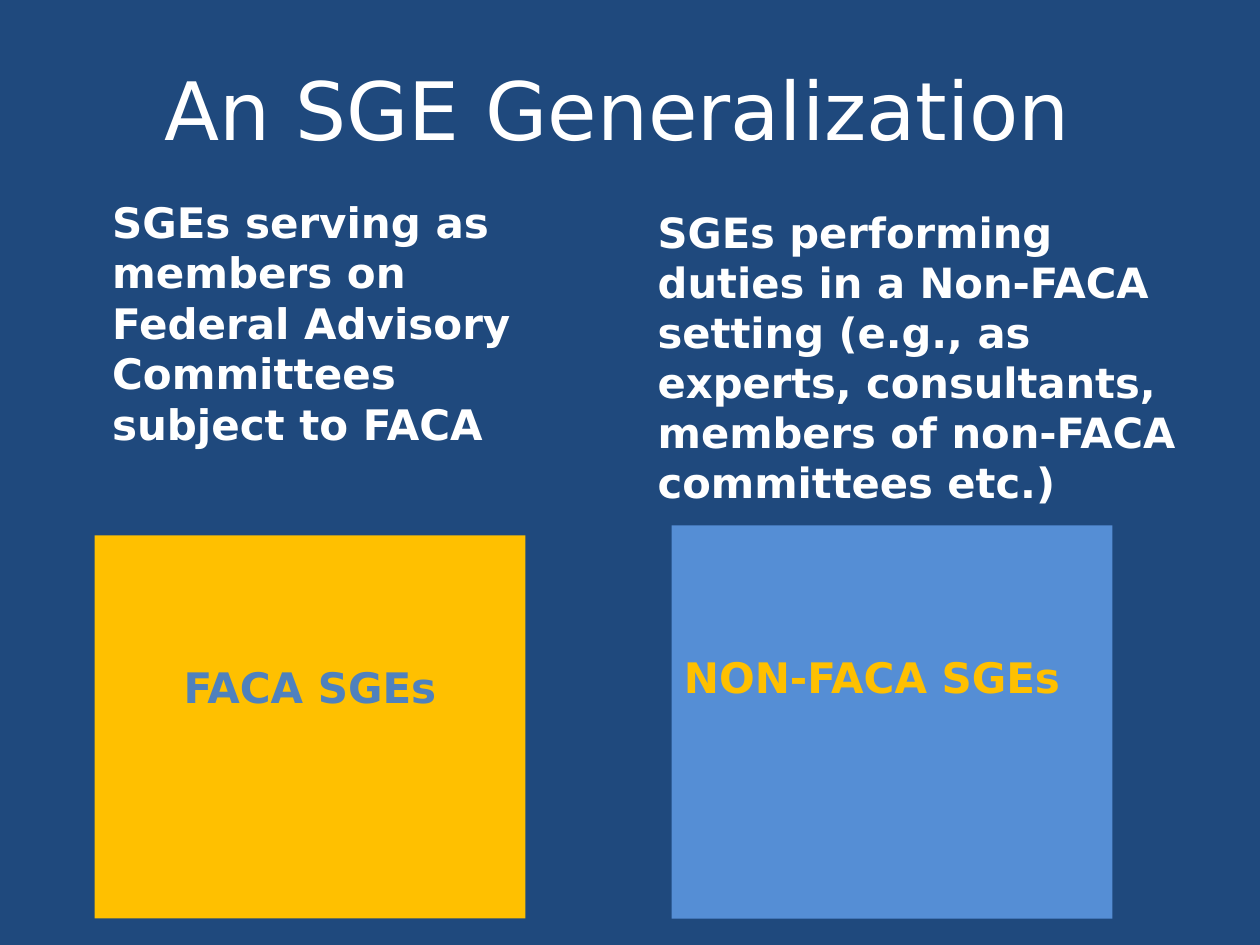
from pptx import Presentation
from pptx.dml.color import RGBColor
from pptx.enum.shapes import MSO_SHAPE
from pptx.enum.text import MSO_ANCHOR, PP_ALIGN
from pptx.util import Inches, Pt

FONT = "DejaVu Sans"
COLORS = {"navy": "1F497D", "white": "FFFFFF", "gold": "FFC000",
          "sky": "558ED5", "steel": "4F81BD"}

# Content: places are left, top, width, height in inches
TITLE = ("An SGE Generalization ", (0.5, 0.3, 9, 1.12))
DESCRIPTIONS = [
    ("SGEs serving as members on Federal Advisory Committees subject to FACA",
     (0.75, 1.5, 3.83, 2.33), 24),
    ("SGEs performing duties in a Non-FACA setting (e.g., as experts, "
     "consultants, members of non-FACA committees etc.)",
     (5.08, 1.58, 4.42, 2.83), 23.8),
]
BOXES = [
    ("FACA SGEs", (0.75, 4.25, 3.42, 3.04), "gold", "steel", PP_ALIGN.CENTER),
    ("NON-FACA SGEs", (5.33, 4.17, 3.5, 3.12), "sky", "gold", PP_ALIGN.LEFT),
]


def rgb(name):
    return RGBColor.from_string(COLORS[name])


def write(sp, text, size, color, bold=True, align=PP_ALIGN.LEFT,
          anchor=MSO_ANCHOR.TOP, left=0.1, top=0.05):
    tf = sp.text_frame
    tf.word_wrap = True
    tf.vertical_anchor = anchor
    tf.margin_left, tf.margin_top = Inches(left), Inches(top)
    tf.text = text
    p = tf.paragraphs[0]
    p.alignment = align
    font = p.runs[0].font
    font.name, font.size, font.bold = FONT, Pt(size), bold
    font.color.rgb = rgb(color)


prs = Presentation()
prs.slide_width, prs.slide_height = Inches(10), Inches(7.5)
slide = prs.slides.add_slide(prs.slide_layouts[6])
slide.background.fill.solid()
slide.background.fill.fore_color.rgb = rgb("navy")

# Title
text, place = TITLE
sp = slide.shapes.add_textbox(*map(Inches, place))
write(sp, text, 46, "white", bold=False, align=PP_ALIGN.CENTER,
      anchor=MSO_ANCHOR.MIDDLE)

# Coloured boxes with their labels
for text, place, fill, color, align in BOXES:
    sp = slide.shapes.add_shape(MSO_SHAPE.RECTANGLE, *map(Inches, place))
    sp.shadow.inherit = False
    sp.fill.solid()
    sp.fill.fore_color.rgb = rgb(fill)
    sp.line.fill.background()
    write(sp, text, 24, color, align=align, top=1)

# Descriptions above the boxes
for text, place, size in DESCRIPTIONS:
    sp = slide.shapes.add_textbox(*map(Inches, place))
    write(sp, text, size, "white", left=0.14, top=0.06)

prs.save("out.pptx")
